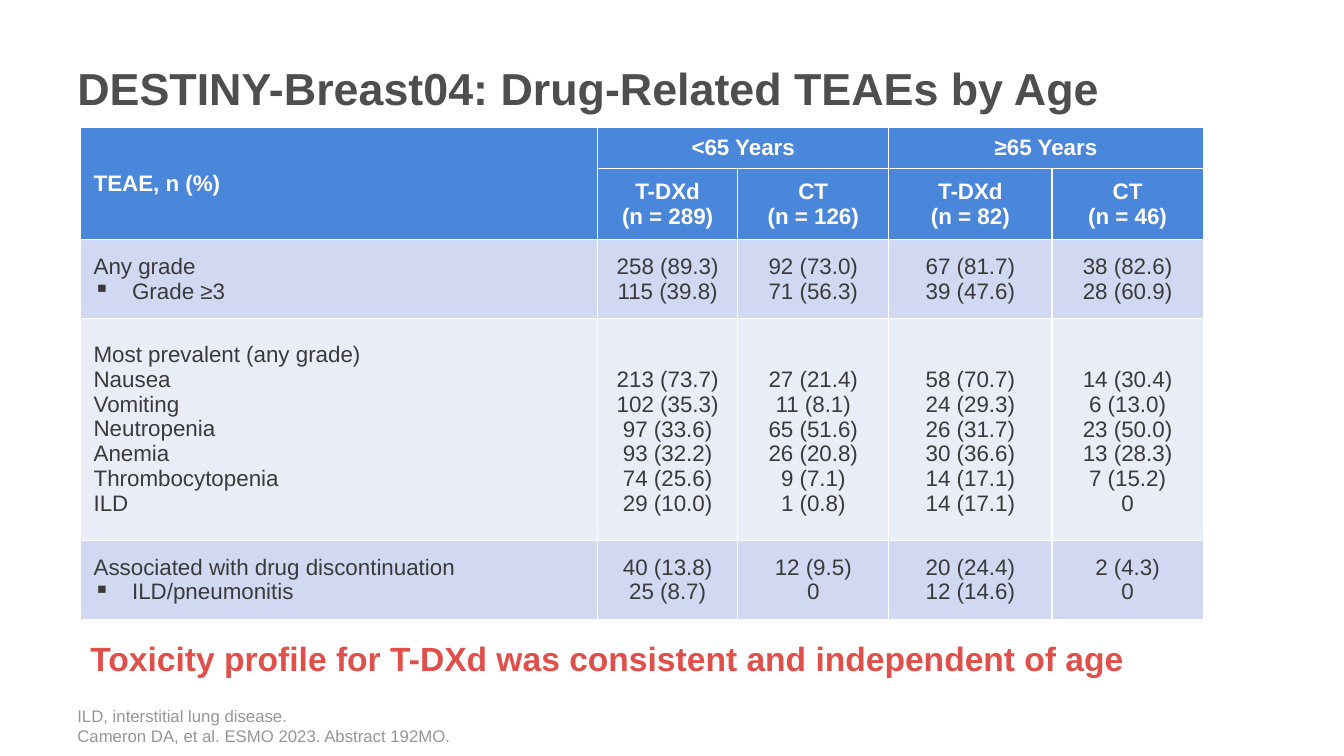
from lxml.etree import SubElement
from pptx import Presentation
from pptx.dml.color import RGBColor
from pptx.enum.text import MSO_ANCHOR, PP_ALIGN
from pptx.oxml.ns import qn
from pptx.util import Cm, Pt

TITLE_GREY = RGBColor(0x4D, 0x4E, 0x4D)
TEXT_GREY = RGBColor(0x3A, 0x3A, 0x3A)
NOTE_GREY = RGBColor(0x96, 0x96, 0x96)
RED = RGBColor(0xDF, 0x50, 0x4B)
BLUE = RGBColor(0x4A, 0x86, 0xD9)
BAND_DARK = RGBColor(0xD0, 0xD9, 0xF1)
BAND_LIGHT = RGBColor(0xE9, 0xED, 0xF8)
WHITE = RGBColor(0xFF, 0xFF, 0xFF)

COL_WIDTHS = [13.03, 3.53, 3.81, 4.11, 3.81]
ROW_HEIGHTS = [1.04, 1.8, 1.98, 5.59, 2.0]
ROW_FILLS = [BLUE, BLUE, BAND_DARK, BAND_LIGHT, BAND_DARK]
HEADER_ROWS = 2
PREVALENT_ROW = 3
LINE_HEIGHT = 0.63
BULLET = "▪"

# Each cell lists its lines; a line that starts with the bullet is indented
ROWS = [
    [["TEAE, n (%)"], ["<65 Years"], [], ["≥65 Years"], []],
    [[], ["T-DXd", "(n = 289)"], ["CT", "(n = 126)"],
     ["T-DXd", "(n = 82)"], ["CT", "(n = 46)"]],
    [["Any grade", "▪Grade ≥3"], ["258 (89.3)", "115 (39.8)"],
     ["92 (73.0)", "71 (56.3)"], ["67 (81.7)", "39 (47.6)"],
     ["38 (82.6)", "28 (60.9)"]],
    [["Most prevalent (any grade)", "Nausea", "Vomiting", "Neutropenia",
      "Anemia", "Thrombocytopenia", "ILD"],
     ["213 (73.7)", "102 (35.3)", "97 (33.6)", "93 (32.2)", "74 (25.6)", "29 (10.0)"],
     ["27 (21.4)", "11 (8.1)", "65 (51.6)", "26 (20.8)", "9 (7.1)", "1 (0.8)"],
     ["58 (70.7)", "24 (29.3)", "26 (31.7)", "30 (36.6)", "14 (17.1)", "14 (17.1)"],
     ["14 (30.4)", "6 (13.0)", "23 (50.0)", "13 (28.3)", "7 (15.2)", "0"]],
    [["Associated with drug discontinuation", "▪ILD/pneumonitis"],
     ["40 (13.8)", "25 (8.7)"], ["12 (9.5)", "0"],
     ["20 (24.4)", "12 (14.6)"], ["2 (4.3)", "0"]],
]


class SlideBuilder:
    font = "Arial"
    table_size = 16

    def __init__(self, s):
        self.s = s

    def set_lines(self, tf, lines, size, color, bold=False, align=PP_ALIGN.LEFT):
        tf.text = "\n".join(line.removeprefix(BULLET) for line in lines)
        for p, line in zip(tf.paragraphs, lines):
            p.alignment = align
            if line.startswith(BULLET):
                self.bullet(p)
            for r in p.runs:
                r.font.name = self.font
                r.font.size = Pt(size)
                r.font.bold = bold
                r.font.color.rgb = color

    def bullet(self, p):
        pPr = p._p.get_or_add_pPr()
        pPr.set("marL", str(Cm(0.97)))
        pPr.set("indent", str(-Cm(0.97)))
        SubElement(pPr, qn("a:buChar"), char=BULLET)

    def text(self, lines, left, top, width, height, size, color,
             bold=False, anchor=MSO_ANCHOR.MIDDLE):
        sp = self.s.shapes.add_textbox(Cm(left), Cm(top), Cm(width), Cm(height))
        tf = sp.text_frame
        tf.word_wrap = True
        tf.vertical_anchor = anchor
        self.set_lines(tf, lines, size, color, bold)

    def borders(self, cell):
        tcPr = cell._tc.get_or_add_tcPr()
        for side in ("lnL", "lnR", "lnT", "lnB"):
            ln = SubElement(tcPr, qn(f"a:{side}"), w=str(Pt(1)))
            fill = SubElement(ln, qn("a:solidFill"))
            SubElement(fill, qn("a:srgbClr"), val=str(WHITE))

    def cell(self, cell, lines, fill, header, first_column):
        self.borders(cell)
        cell.fill.solid()
        cell.fill.fore_color.rgb = fill
        cell.vertical_anchor = MSO_ANCHOR.MIDDLE
        if header or first_column:
            cell.margin_left = cell.margin_right = Cm(0.33)
        if lines:
            self.set_lines(cell.text_frame, lines, self.table_size,
                           WHITE if header else TEXT_GREY, header,
                           PP_ALIGN.LEFT if first_column else PP_ALIGN.CENTER)

    def table(self, rows, left, top):
        frame = self.s.shapes.add_table(
            len(rows), len(COL_WIDTHS), Cm(left), Cm(top),
            Cm(sum(COL_WIDTHS)), Cm(sum(ROW_HEIGHTS)))
        table = frame.table
        for column, width in zip(table.columns, COL_WIDTHS):
            column.width = Cm(width)
        for i, row in enumerate(rows):
            table.rows[i].height = Cm(ROW_HEIGHTS[i])
            for j, lines in enumerate(row):
                self.cell(table.cell(i, j), lines, ROW_FILLS[i],
                          i < HEADER_ROWS, j == 0)
        return table


def main():
    prs = Presentation()
    prs.slide_width, prs.slide_height = Cm(33.87), Cm(19.05)
    builder = SlideBuilder(prs.slides.add_slide(prs.slide_layouts[6]))

    # Title
    builder.text(["DESTINY-Breast04: Drug-Related TEAEs by Age"],
                 1.7, 0.56, 29.85, 3.3, 32, TITLE_GREY, bold=True)

    # Adverse events table
    table = builder.table(ROWS, 2.03, 3.2)
    table.cell(0, 0).merge(table.cell(1, 0))
    for j in (1, 3):
        table.cell(0, j).merge(table.cell(0, j + 1))
    # Counts start one line below the row heading
    for j in range(1, len(COL_WIDTHS)):
        table.cell(PREVALENT_ROW, j).margin_top = Cm(0.13 + LINE_HEIGHT)

    # Footnotes
    builder.text(["ILD, interstitial lung disease.",
                  "Cameron DA, et al. ESMO 2023. Abstract 192MO."],
                 1.7, 17.65, 29.85, 1.22, 12, NOTE_GREY, anchor=MSO_ANCHOR.TOP)

    # Conclusion
    builder.text(["Toxicity profile for T-DXd was consistent and independent of age"],
                 2.03, 15.85, 28.32, 1.47, 24, RED, bold=True)

    prs.save("out.pptx")


if __name__ == "__main__":
    main()
